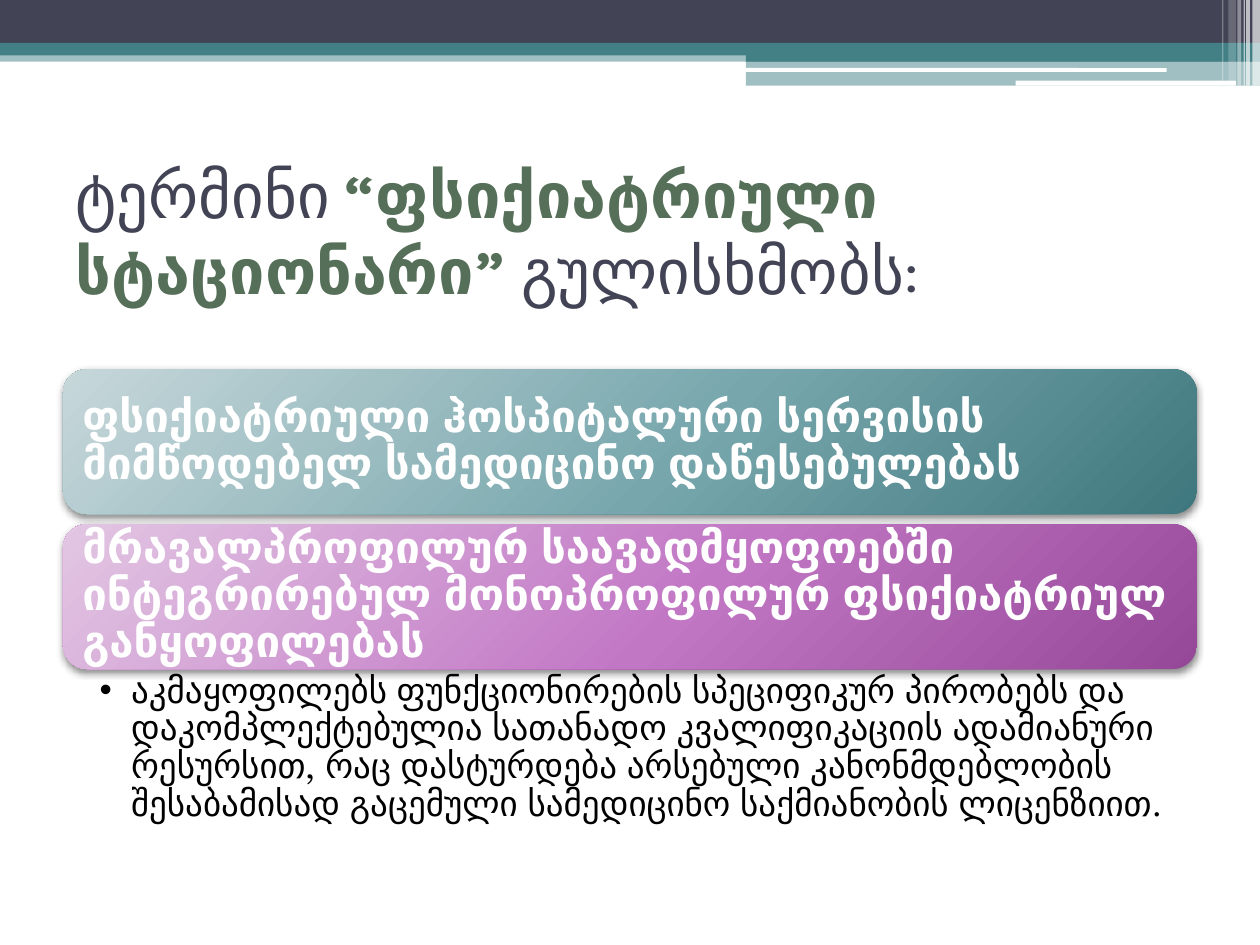
from dataclasses import dataclass

from lxml import etree
from pptx import Presentation
from pptx.dml.color import RGBColor
from pptx.enum import shapes, text
from pptx.oxml import parse_xml
from pptx.oxml.ns import nsdecls, qn
from pptx.util import Inches, Pt


@dataclass(frozen=True)
class Theme:
    white: str = "FFFFFF"
    black: str = "000000"
    navy: str = "424456"
    teal: str = "438086"
    green: str = "556F58"
    teal_card: tuple = ("C7D7DA", "77A7AD", "3E777D")
    purple_card: tuple = ("E2C6E3", "C277C5", "954898")
    heading_font: str = "Karla"
    body_font: str = "TeX Gyre Schola"
    title_size: int = 36
    card_size: int = 25
    detail_size: int = 20


THEME = Theme()
RECT = shapes.MSO_SHAPE.RECTANGLE
ROUNDED = shapes.MSO_SHAPE.ROUNDED_RECTANGLE

TITLE_PARTS = [
    ("ტერმინი ", THEME.navy, False),
    ("“ფსიქიატრიული სტაციონარი” ", THEME.green, True),
    ("გულისხმობს:", THEME.navy, False),
]
CARDS = [
    ("ფსიქიატრიული ჰოსპიტალური სერვისის მიმწოდებელ სამედიცინო "
     "დაწესებულებას", THEME.teal_card),
    ("მრავალპროფილურ საავადმყოფოებში ინტეგრირებულ მონოპროფილურ "
     "ფსიქიატრიულ განყოფილებას", THEME.purple_card),
]
DETAIL = (
    "აკმაყოფილებს ფუნქციონირების სპეციფიკურ პირობებს და დაკომპლექტებულია "
    "სათანადო კვალიფიკაციის ადამიანური რესურსით, რაც დასტურდება არსებული "
    "კანონმდებლობის შესაბამისად გაცემული სამედიცინო საქმიანობის ლიცენზიით."
)


def place(part, box):
    part.left, part.top, part.width, part.height = map(Inches, box)


def style_run(run, font, size, color, bold=False):
    run.font.name = font
    run.font.size = Pt(size)
    run.font.bold = bold
    run.font.color.rgb = RGBColor.from_string(color)


def set_frame(frame, insets, anchor):
    frame.word_wrap = True
    frame.auto_size = text.MSO_AUTO_SIZE.NONE
    frame.vertical_anchor = anchor
    (frame.margin_left, frame.margin_top,
     frame.margin_right, frame.margin_bottom) = map(Inches, insets)


def add_panel(slide, kind, box, color, opacity=100):
    panel = slide.shapes.add_shape(kind, *map(Inches, box))
    panel.shadow.inherit = False
    panel.line.fill.background()
    panel.fill.solid()
    panel.fill.fore_color.rgb = RGBColor.from_string(color)
    if opacity < 100:
        tint = panel._element.spPr.find(qn("a:solidFill"))[0]
        etree.SubElement(tint, qn("a:alpha"), val=str(opacity * 1000))
    return panel


def add_header(slide, box):
    left, top, width, height = box
    right = left + width
    split = left + 5.92
    bands = [
        (left, 0.4, width, 0.09, THEME.teal, 50),
        (left, 0, width, 0.34, THEME.navy, 100),
        (left, 0.34, width, 0.1, THEME.teal, 100),
        (split, 0.39, right - split, 0.1, THEME.teal, 100),
        (split, 0.48, right - split, 0.2, THEME.teal, 50),
    ]
    for x, y, w, h, color, opacity in bands:
        add_panel(slide, RECT, (x, top + y, w, h), color, opacity)
    for x, y, w, h in [(5.91, 0.54, 3.35, 0.03), (8.06, 0.64, 1.75, 0.04)]:
        stripe = add_panel(slide, ROUNDED, (left + x, top + y, w, h), THEME.white)
        stripe.adjustments[0] = 0.167
    ticks = [
        (0.06, 0.06, height, 65),
        (0.11, 0.03, height, 65),
        (0.13, 0.01, height, 60),
        (0.18, 0.03, height, 40),
        (0.25, 0.06, 0.64, 20),
        (0.3, 0.01, 0.64, 30),
    ]
    for offset, w, h, opacity in ticks:
        add_panel(slide, RECT, (right - offset, top, w, h), THEME.white, opacity)


def add_title(slide, box):
    title = slide.shapes.title
    place(title, box)
    frame = title.text_frame
    set_frame(frame, (0.1, 0.05, 0.1, 0.05), text.MSO_ANCHOR.MIDDLE)
    line = frame.paragraphs[0]
    line.alignment = text.PP_ALIGN.LEFT
    for words, color, bold in TITLE_PARTS:
        run = line.add_run()
        run.text = words
        style_run(run, THEME.heading_font, THEME.title_size, color, bold)


def add_glow(card, colors):
    stops = "".join(
        f'<a:gs pos="{pos * 1000}"><a:srgbClr val="{color}"/></a:gs>'
        for pos, color in zip((0, 55, 100), colors)
    )
    gradient = parse_xml(
        f'<a:gradFill {nsdecls("a")} rotWithShape="1"><a:gsLst>{stops}</a:gsLst>'
        '<a:path path="circle"><a:fillToRect l="-40000" t="-90000" '
        'r="140000" b="190000"/></a:path></a:gradFill>'
    )
    shadow = parse_xml(
        f'<a:outerShdw {nsdecls("a")} blurRad="{Pt(4)}" dist="{Pt(2)}" '
        f'dir="5400000" rotWithShape="0"><a:srgbClr val="{THEME.black}">'
        '<a:alpha val="45000"/></a:srgbClr></a:outerShdw>'
    )
    properties = card._element.spPr
    properties.replace(properties.find(qn("a:solidFill")), gradient)
    properties.find(qn("a:effectLst")).append(shadow)


def add_card(slide, box, words, colors):
    card = add_panel(slide, ROUNDED, box, colors[1])
    add_glow(card, colors)
    left, top, width, height = box
    pad = 0.055
    label = slide.shapes.add_textbox(*map(Inches, (
        left + pad, top + pad, width - 2 * pad, height - 2 * pad)))
    frame = label.text_frame
    set_frame(frame, (0.1,) * 4, text.MSO_ANCHOR.MIDDLE)
    frame.text = words
    line = frame.paragraphs[0]
    line.line_spacing = 0.9
    style_run(line.runs[0], THEME.body_font, THEME.card_size, THEME.white, True)


def add_cards(slide, box):
    left, top, width, height = box
    gap = 0.08
    card_height = (height - gap * (len(CARDS) - 1)) / len(CARDS)
    for row, (words, colors) in enumerate(CARDS):
        card_top = top + row * (card_height + gap)
        add_card(slide, (left, card_top, width, card_height), words, colors)


def add_detail(slide, box):
    detail = slide.placeholders[1]
    place(detail, box)
    frame = detail.text_frame
    set_frame(frame, (0.29, 0.03, 0.19, 0.03), text.MSO_ANCHOR.TOP)
    frame.text = DETAIL
    item = frame.paragraphs[0]
    item.level = 1
    item.line_spacing = 0.9
    item.space_before = Pt(0)
    item.space_after = Pt(4)
    properties = item._p.get_or_add_pPr()
    properties.set("marL", str(Inches(0.25)))
    properties.set("indent", str(Inches(-0.25)))
    etree.SubElement(properties, qn("a:buChar"), char="•")
    style_run(item.runs[0], THEME.body_font, THEME.detail_size, THEME.black)


def main():
    deck = Presentation()
    deck.slide_width, deck.slide_height = Inches(10), Inches(7.5)
    slide = deck.slides.add_slide(deck.slide_layouts[1])
    slide.background.fill.solid()
    slide.background.fill.fore_color.rgb = RGBColor.from_string(THEME.white)
    add_header(slide, (0, 0, 10, 0.68))
    add_title(slide, (0.5, 1.25, 9, 1.17))
    add_cards(slide, (0.5, 2.93, 9, 2.38))
    add_detail(slide, (0.5, 5.31, 9, 1.41))
    deck.save("out.pptx")


if __name__ == "__main__":
    main()
